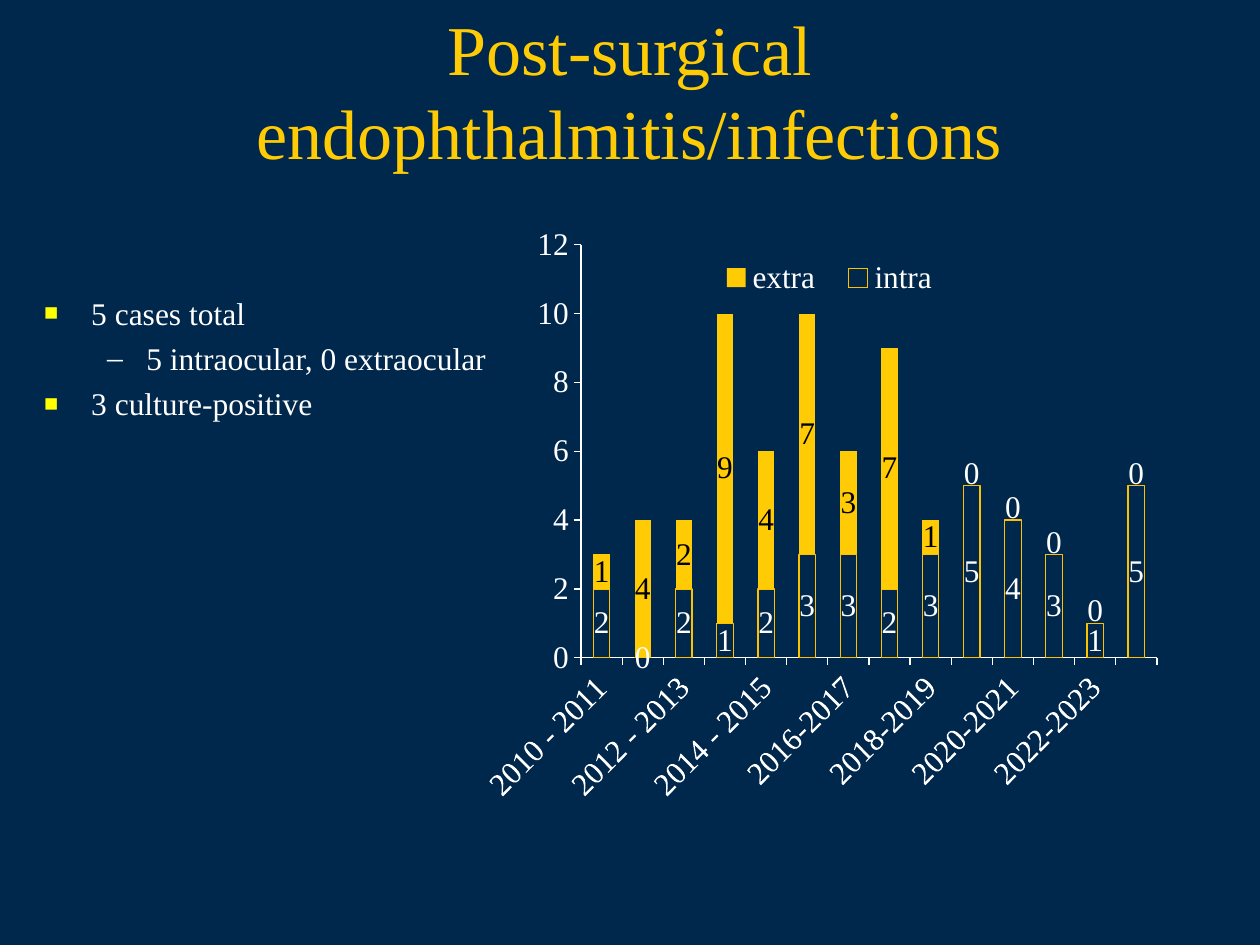
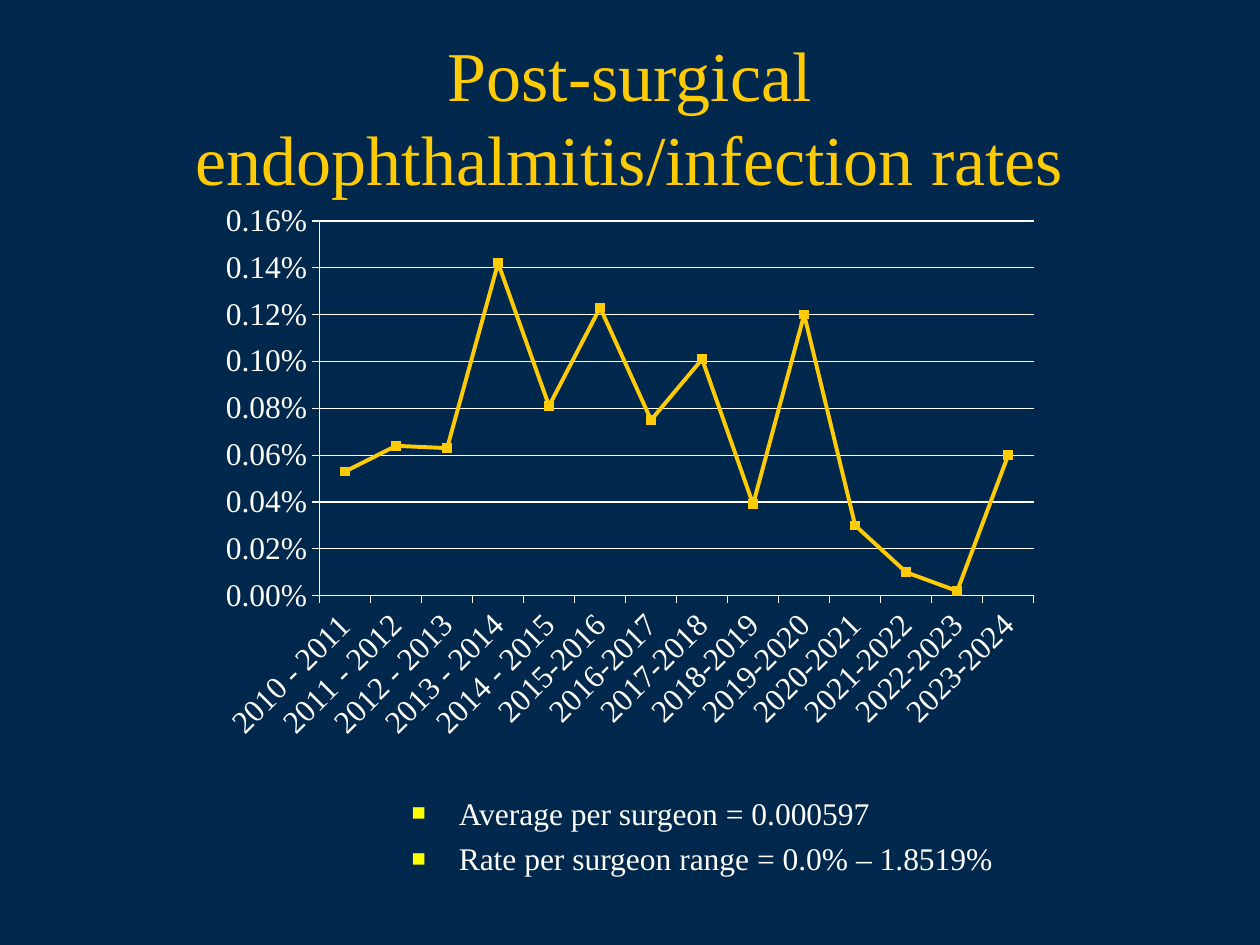
import dataclasses
import typing

import lxml.etree
import pptx
import pptx.chart.chart
import pptx.chart.data
import pptx.dml.color
import pptx.enum.chart
import pptx.enum.text
import pptx.oxml.ns
import pptx.slide
import pptx.util

Cm = pptx.util.Cm
Pt = pptx.util.Pt

# Shared look
FACE = "Times New Roman"
NAVY = "00274C"
MAIZE = "FFCB05"
GOLD = "FFC000"
WHITE = "FFFFFF"
BLACK = "000000"
YELLOW = "FFFF00"
SMALL = 18
LARGE = 40

YEARS = ["2010 - 2011", "2011 - 2012", "2012 - 2013", "2013 - 2014", "2014 - 2015"]
YEARS += [f"{year}-{year + 1}" for year in range(2015, 2024)]
INTRA = [2, 0, 2, 1, 2, 3, 3, 2, 3, 5, 4, 3, 1, 5]
EXTRA = [1, 4, 2, 9, 4, 7, 3, 7, 1, 0, 0, 0, 0, 0]
RATES = [0.00053, 0.00064, 0.00063, 0.00142, 0.00081, 0.00123, 0.00075,
         0.00101, 0.00039, 0.0012, 0.0003, 0.0001, 0.00002, 0.0006]


@dataclasses.dataclass(frozen=True)
class Box:
    left: float
    top: float
    width: float
    height: float

    def place(self) -> list[int]:
        return [Cm(side) for side in dataclasses.astuple(self)]


@dataclasses.dataclass(frozen=True)
class Level:
    mark: str
    tint: str
    size: int
    left: float
    hang: float


@dataclasses.dataclass(frozen=True)
class Item:
    text: str
    level: int = 0


@dataclasses.dataclass(frozen=True)
class Graph:
    kind: int
    box: Box
    area: Box
    data: dict[str, list[float]]
    top: float
    step: float
    code: str
    grid: bool = False


LEVELS = [Level("■", YELLOW, 75, 0.95, 0.95), Level("–", WHITE, 100, 2.06, 0.79)]


# Helpers
def shade(code: str) -> pptx.dml.color.RGBColor:
    return pptx.dml.color.RGBColor.from_string(code)


def style(font: typing.Any, size: int, tint: str) -> None:
    font.name = FACE
    font.size = Pt(size)
    font.color.rgb = shade(tint)


def paint(fill: typing.Any, tint: str) -> None:
    fill.solid()
    fill.fore_color.rgb = shade(tint)


def trace(line: typing.Any, tint: str, width: float = 0.75) -> None:
    paint(line.fill, tint)
    line.width = Pt(width)


def node(tag: str, **pairs: typing.Any) -> typing.Any:
    made = lxml.etree.Element(pptx.oxml.ns.qn(tag))
    for key, value in pairs.items():
        made.set(key, str(value))
    return made


def layout(host: typing.Any, index: int, **parts: typing.Any) -> None:
    """Give a chart part a manual layout."""
    for old in host.findall(pptx.oxml.ns.qn("c:layout")):
        host.remove(old)
    outer, inner = node("c:layout"), node("c:manualLayout")
    for key, value in parts.items():
        inner.append(node(f"c:{key}", val=value))
    outer.append(inner)
    host.insert(index, outer)


def edges(box: Box) -> dict[str, typing.Any]:
    return dict(xMode="edge", yMode="edge", x=box.left, y=box.top,
                w=box.width, h=box.height)


# Text
def title(slide: pptx.slide.Slide, text: str, height: float) -> None:
    shape = slide.shapes.add_textbox(*Box(1.9, 0.64, 21.59, height).place())
    frame = shape.text_frame
    frame.word_wrap = True
    frame.vertical_anchor = pptx.enum.text.MSO_ANCHOR.MIDDLE
    frame.text = text
    para = frame.paragraphs[0]
    para.alignment = pptx.enum.text.PP_ALIGN.CENTER
    style(para.runs[0].font, LARGE, MAIZE)


def bullets(slide: pptx.slide.Slide, box: Box, items: list[Item], inset: float = 0.13) -> None:
    frame = slide.shapes.add_textbox(*box.place()).text_frame
    frame.word_wrap = True
    frame.margin_top = Cm(inset)
    for index, item in enumerate(items):
        para = frame.add_paragraph() if index else frame.paragraphs[0]
        para.text = item.text
        para.level = item.level
        para.space_before = Pt(4.3)
        style(para.runs[0].font, SMALL, WHITE)
        level = LEVELS[item.level]
        props = para._p.get_or_add_pPr()
        props.set("marL", str(Cm(level.left)))
        props.set("indent", str(-Cm(level.hang)))
        tint = node("a:buClr")
        tint.append(node("a:srgbClr", val=level.tint))
        props.extend([tint, node("a:buSzPct", val=level.size * 1000),
                      node("a:buFont", typeface=FACE), node("a:buChar", char=level.mark)])


# Charts
def plot(slide: pptx.slide.Slide, graph: Graph) -> pptx.chart.chart.Chart:
    data = pptx.chart.data.CategoryChartData()
    data.categories = YEARS
    for name, values in graph.data.items():
        data.add_series(name, values)
    chart = slide.shapes.add_chart(graph.kind, *graph.box.place(), data).chart
    chart.has_title = False
    chart.has_legend = False
    style(chart.font, SMALL, WHITE)
    layout(chart._chartSpace.chart.plotArea, 0, layoutTarget="inner", **edges(graph.area))
    chart.plots[0].vary_by_categories = False

    for axis in (chart.category_axis, chart.value_axis):
        axis.major_tick_mark = pptx.enum.chart.XL_TICK_MARK.OUTSIDE
        axis.has_major_gridlines = False
        trace(axis.format.line, WHITE)
        style(axis.tick_labels.font, SMALL, WHITE)
    body = chart.category_axis._element.find(".//" + pptx.oxml.ns.qn("a:bodyPr"))
    body.set("rot", str(-45 * 60000))

    scale = chart.value_axis
    scale.minimum_scale = 0
    scale.maximum_scale = graph.top
    scale.major_unit = graph.step
    scale.tick_labels.number_format = graph.code
    scale.tick_labels.number_format_is_linked = False
    if graph.grid:
        scale.has_major_gridlines = True
        trace(scale.major_gridlines.format.line, WHITE)
    return chart


def stack(chart: pptx.chart.chart.Chart) -> None:
    bars = chart.plots[0]
    bars.gap_width = 150
    bars.overlap = 100
    intra, extra = bars.series
    for series, tint, ink in ((intra, NAVY, WHITE), (extra, MAIZE, BLACK)):
        paint(series.format.fill, tint)
        labels = series.data_labels
        labels.show_value = True
        style(labels.font, SMALL, ink)
    trace(intra.format.line, GOLD)

    # Zero labels sit just above their bars
    for index, value in enumerate(EXTRA):
        if value == 0:
            label = extra.points[index].data_label
            style(label.font, SMALL, WHITE)
            layout(label._dLbl, 1, x=0, y=-0.02)

    chart.has_legend = True
    legend = chart.legend
    legend.position = pptx.enum.chart.XL_LEGEND_POSITION.RIGHT
    legend.include_in_layout = False
    style(legend.font, SMALL, WHITE)
    layout(legend._element, 1, **edges(Box(0.3, 0.05, 0.35, 0.09)))


def curve(chart: pptx.chart.chart.Chart) -> None:
    series = chart.plots[0].series[0]
    series.smooth = False
    trace(series.format.line, MAIZE, 2.25)
    marker = series.marker
    marker.style = pptx.enum.chart.XL_MARKER_STYLE.SQUARE
    marker.size = 5
    paint(marker.format.fill, MAIZE)
    trace(marker.format.line, MAIZE)


# Slides
def start(deck: typing.Any, text: str, height: float) -> pptx.slide.Slide:
    slide = deck.slides.add_slide(deck.slide_layouts[6])
    paint(slide.background.fill, NAVY)
    title(slide, text, height)
    return slide


def main() -> None:
    deck = pptx.Presentation()
    deck.slide_width = Cm(25.4)
    deck.slide_height = Cm(19.05)
    kinds = pptx.enum.chart.XL_CHART_TYPE

    # Case counts
    slide = start(deck, "Post-surgical endophthalmitis/infections", 2.34)
    bullets(slide, Box(0.64, 4.65, 9.96, 5.08), [
        Item("5 cases total"),
        Item("5 intraocular, 0 extraocular", 1),
        Item("3 culture-positive"),
    ], inset=1.27)
    stack(plot(slide, Graph(
        kinds.COLUMN_STACKED, Box(9.73, 4.45, 14.61, 12.07), Box(0.13, 0.04, 0.8, 0.69),
        {"intra": INTRA, "extra": EXTRA}, 12, 2, "General")))

    # Infection rates
    slide = start(deck, "Post-surgical endophthalmitis/infection rates", 3.38)
    bullets(slide, Box(8.05, 15.88, 15.44, 2.64), [
        Item("Average per surgeon = 0.000597"),
        Item("Rate per surgeon range = 0.0% – 1.8519%"),
    ])
    curve(plot(slide, Graph(
        kinds.LINE_MARKERS, Box(4.24, 3.89, 16.94, 11.28), Box(0.13, 0.05, 0.85, 0.67),
        {"Series 1": RATES}, 0.0016, 0.0002, "0.00%", grid=True)))

    deck.save("out.pptx")


if __name__ == "__main__":
    main()
